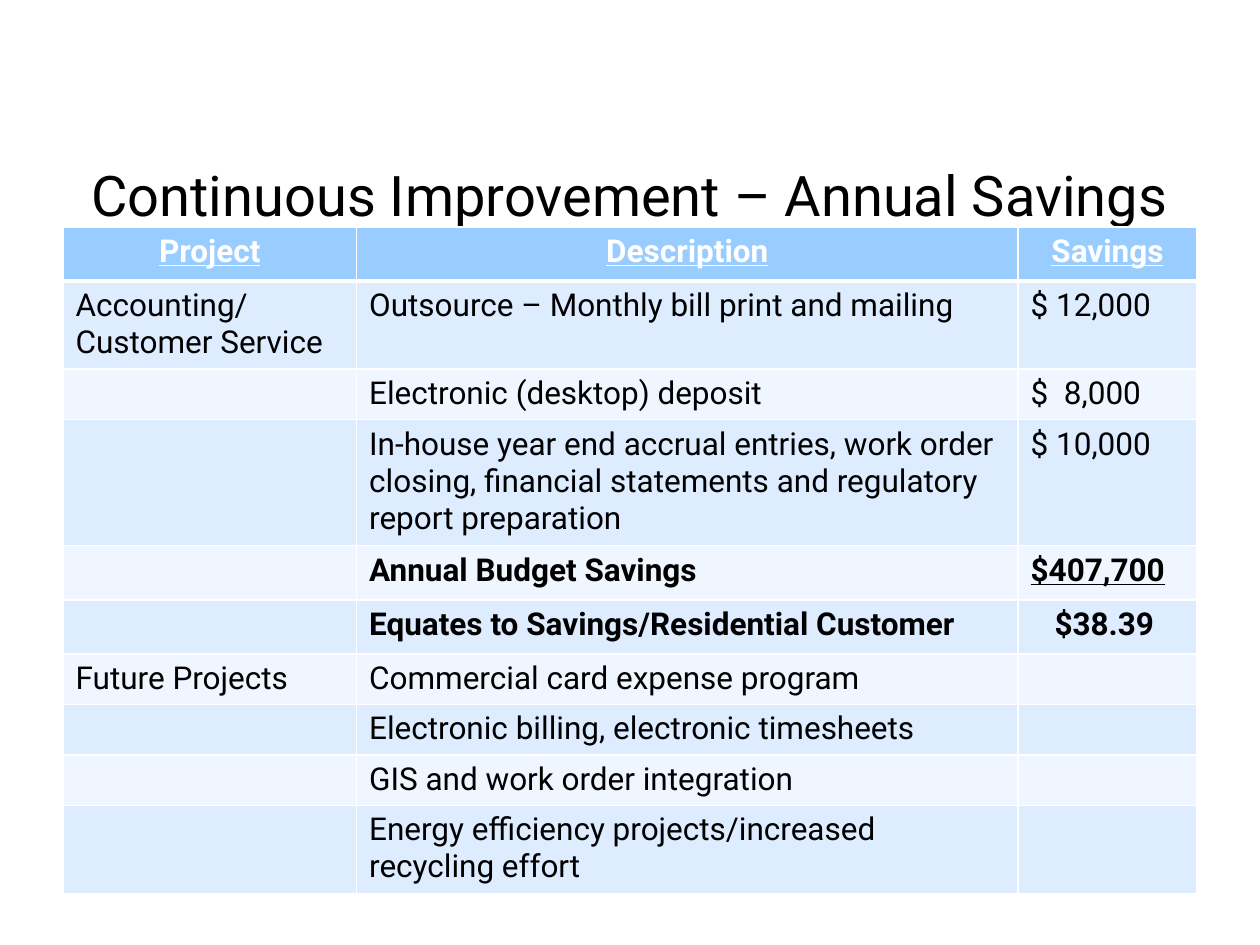
from collections import namedtuple
from dataclasses import dataclass

from lxml import etree
from pptx import Presentation
from pptx.dml.color import RGBColor
from pptx.enum import text
from pptx.oxml import ns
from pptx.util import Inches, Pt

Box = namedtuple("Box", "left top width height")


@dataclass(frozen=True)
class Theme:
    """Hold the colours and type sizes of the slide."""
    font: str = "Roboto"
    ink: str = "000000"
    paper: str = "FFFFFF"
    header: str = "99CCFF"
    bands: tuple = ("DEECFF", "EFF6FF")
    title_size: int = 32
    table_size: int = 18
    rule: float = 1
    header_rule: float = 3


THEME = Theme()
TITLE_AREA = (0.05, 0.1667, 0.9, 0.0773)
TABLE_AREA = (0.05, 0.24, 0.9, 0.6733)
COLUMN_UNITS = (2.33, 5.25, 1.42)
ROW_UNITS = (43, 65, 37, 94, 43, 43, 36, 38, 40, 66)
SHIFT = Inches(0.19)
HEADINGS = ("Project", "Description", "Savings")
PROJECTS = (
    ("Accounting/\nCustomer Service", "Outsource – Monthly bill print and mailing", "$ 12,000"),
    ("", "Electronic (desktop) deposit", "$  8,000"),
    ("", "In-house year end accrual entries, work order closing, "
         "financial statements and regulatory report preparation", "$ 10,000"),
    ("", "Annual Budget Savings", "$407,700"),
    ("", "Equates to Savings/Residential Customer", "$38.39"),
    ("Future Projects", "Commercial card expense program", ""),
    ("", "Electronic billing, electronic timesheets", ""),
    ("", "GIS and work order integration", ""),
    ("", "Energy efficiency projects/increased recycling effort", ""),
)
TOTALS = ("Annual Budget Savings", "Equates to Savings/Residential Customer")


def area(deck, shares):
    """Turn shares of the slide into a box."""
    return Box(*(round(share * length) for share, length
                 in zip(shares, (deck.slide_width, deck.slide_height) * 2)))


def write(frame, words, size=THEME.table_size, color=THEME.ink, bold=False,
          underline=False, align=text.PP_ALIGN.LEFT):
    """Write lines of text in one format."""
    for index, line in enumerate(words.split("\n")):
        paragraph = frame.add_paragraph() if index else frame.paragraphs[0]
        paragraph.alignment = align
        if not line:
            continue
        run = paragraph.add_run()
        run.text = line
        run.font.name = THEME.font
        run.font.size = Pt(size)
        run.font.bold = bold
        run.font.underline = underline
        run.font.color.rgb = RGBColor.from_string(color)


def paint_cell(cell, fill, bottom=THEME.rule):
    """Fill a cell and rule its four edges."""
    properties = cell._tc.get_or_add_tcPr()
    for edge in ("lnL", "lnR", "lnT", "lnB"):
        weight = bottom if edge == "lnB" else THEME.rule
        rule = etree.SubElement(properties, ns.qn(f"a:{edge}"), w=str(Pt(weight)))
        solid = etree.SubElement(rule, ns.qn("a:solidFill"))
        etree.SubElement(solid, ns.qn("a:srgbClr"), val=THEME.paper)
    cell.fill.solid()
    cell.fill.fore_color.rgb = RGBColor.from_string(fill)


def add_title(slide, box):
    """Place the centred slide title."""
    frame = slide.shapes.add_textbox(*box).text_frame
    frame.word_wrap = True
    frame.vertical_anchor = text.MSO_ANCHOR.MIDDLE
    write(frame, "Continuous Improvement – Annual Savings",
          size=THEME.title_size, align=text.PP_ALIGN.CENTER)


def add_savings_table(slide, box):
    """Place the table of projects and their savings."""
    table = slide.shapes.add_table(len(ROW_UNITS), len(COLUMN_UNITS), *box).table
    table.horz_banding = False
    for column, units in zip(table.columns, COLUMN_UNITS):
        column.width = round(box.width * units / sum(COLUMN_UNITS))
    for row, units in zip(table.rows, ROW_UNITS):
        row.height = round(box.height * units / sum(ROW_UNITS))
    for cell, heading in zip(table.rows[0].cells, HEADINGS):
        paint_cell(cell, THEME.header, bottom=THEME.header_rule)
        write(cell.text_frame, heading, color=THEME.paper, bold=True,
              underline=True, align=text.PP_ALIGN.CENTER)
    for index, project in enumerate(PROJECTS):
        for cell, words in zip(table.rows[index + 1].cells, project):
            paint_cell(cell, THEME.bands[index % 2])
            write(cell.text_frame, words, bold=project[1] in TOTALS,
                  underline=words == "$407,700")
    per_customer = table.cell(1 + len(PROJECTS[:4]), 2)
    per_customer.margin_left += SHIFT


def main():
    """Build and save the slide."""
    deck = Presentation()
    deck.slide_width, deck.slide_height = Inches(10), Inches(7.5)
    slide = deck.slides.add_slide(deck.slide_layouts[6])
    add_title(slide, area(deck, TITLE_AREA))
    add_savings_table(slide, area(deck, TABLE_AREA))
    deck.save("out.pptx")


if __name__ == "__main__":
    main()
